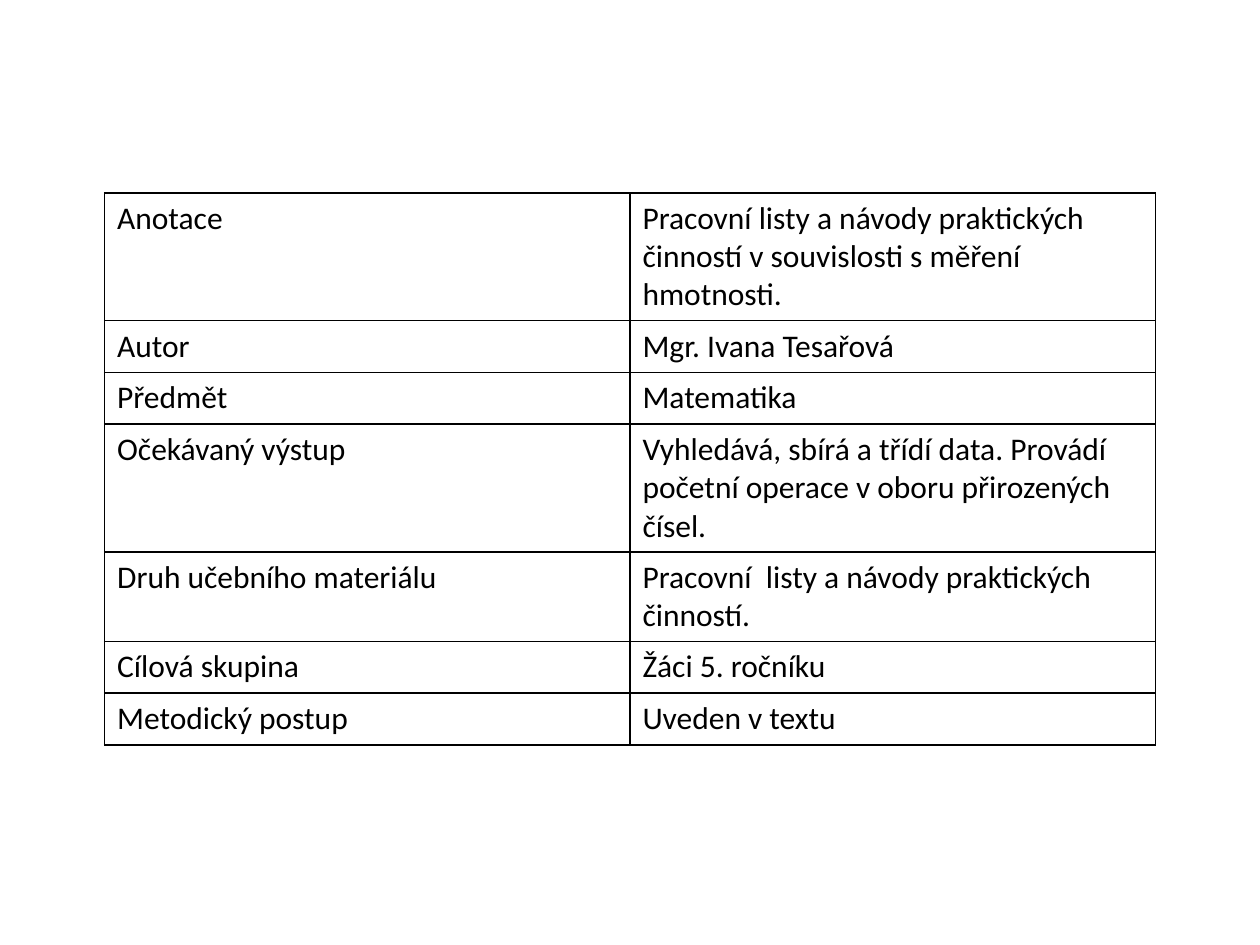
from lxml.etree import SubElement
from pptx import Presentation
from pptx.dml.color import RGBColor
from pptx.oxml.ns import qn
from pptx.util import Inches, Pt

BLACK = RGBColor(0x00, 0x00, 0x00)
FONT = "Calibri"
SLIDE_WIDTH, SLIDE_HEIGHT = Inches(10), Inches(7.5)
TABLE_LEFT, TABLE_TOP = Inches(0.83), Inches(1.53)
COLUMN_WIDTH, ROW_HEIGHT = Inches(4.17), Inches(0.41)

MATERIAL_DETAILS = [
    ("Anotace", "Pracovní listy a návody praktických činností v souvislosti s měření hmotnosti."),
    ("Autor", "Mgr. Ivana Tesařová"),
    ("Předmět", "Matematika"),
    ("Očekávaný výstup", "Vyhledává, sbírá a třídí data. Provádí početní operace v oboru přirozených čísel."),
    ("Druh učebního materiálu", "Pracovní  listy a návody praktických činností."),
    ("Cílová skupina", "Žáci 5. ročníku"),
    ("Metodický postup", "Uveden v textu"),
]


def write_text(text_frame, text, size=18, color=BLACK, font=FONT):
    run = text_frame.paragraphs[0].add_run()
    run.text = text
    run.font.size = Pt(size)
    run.font.name = font
    run.font.color.rgb = color


def set_borders(cell, color=BLACK, width=1):
    """Line all four sides; call before setting the fill, which must follow in the XML."""
    properties = cell._tc.get_or_add_tcPr()
    for side in ("a:lnL", "a:lnR", "a:lnT", "a:lnB"):
        line = SubElement(properties, qn(side), w=str(Pt(width)))
        fill = SubElement(line, qn("a:solidFill"))
        SubElement(fill, qn("a:srgbClr"), val=str(color))


def add_details_table(slide, rows):
    row_count, column_count = len(rows), len(rows[0])
    table = slide.shapes.add_table(
        row_count, column_count, TABLE_LEFT, TABLE_TOP,
        COLUMN_WIDTH * column_count, ROW_HEIGHT * row_count,
    ).table
    table.first_row = False
    table.horz_banding = False
    for row_index, row in enumerate(rows):
        for column_index, text in enumerate(row):
            cell = table.cell(row_index, column_index)
            set_borders(cell)
            cell.fill.background()
            write_text(cell.text_frame, text)


def main():
    presentation = Presentation()
    presentation.slide_width = SLIDE_WIDTH
    presentation.slide_height = SLIDE_HEIGHT
    slide = presentation.slides.add_slide(presentation.slide_layouts[6])
    add_details_table(slide, MATERIAL_DETAILS)
    presentation.save("out.pptx")


if __name__ == "__main__":
    main()
